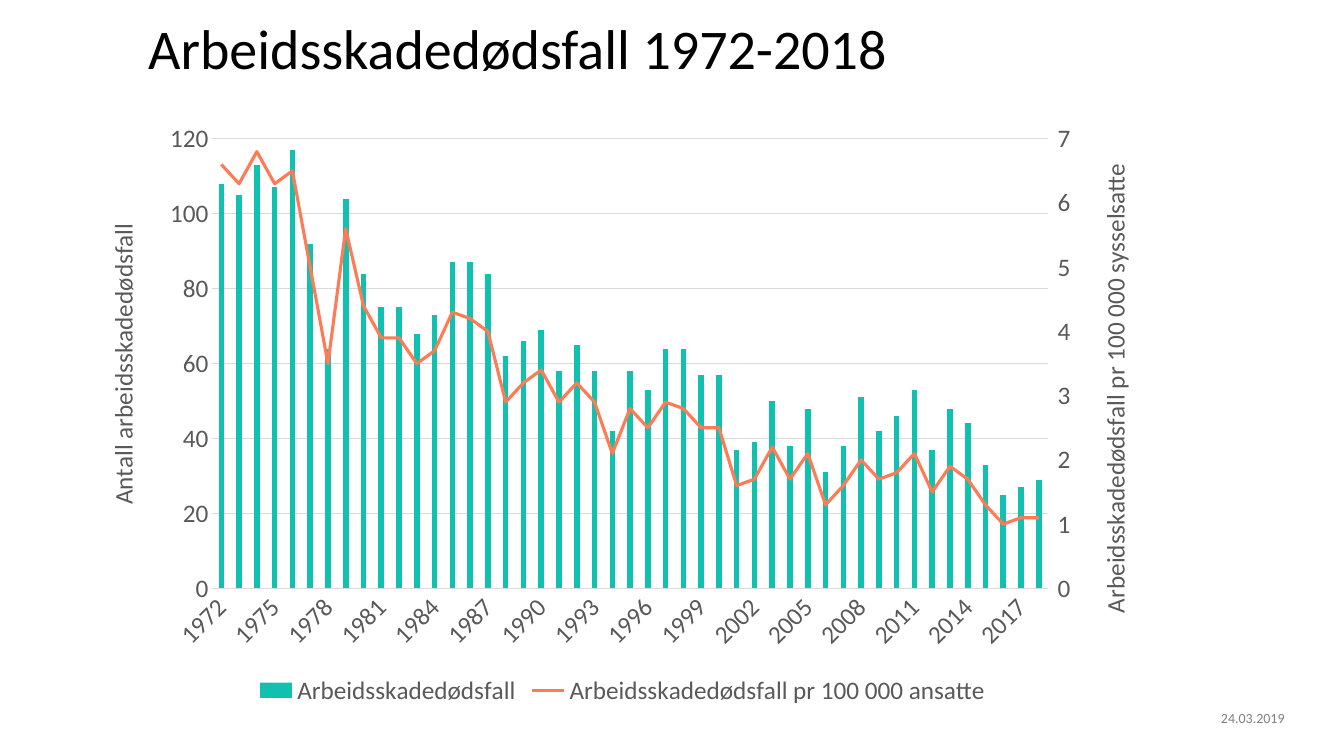
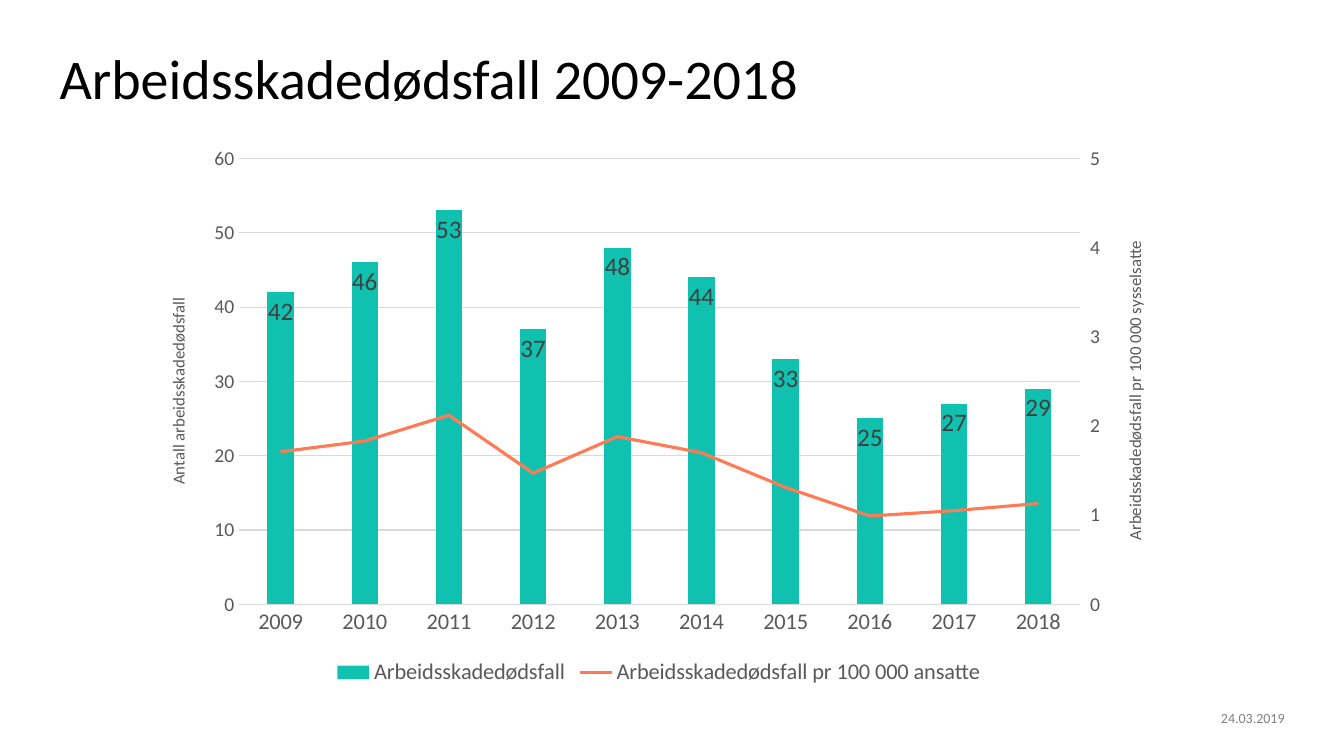
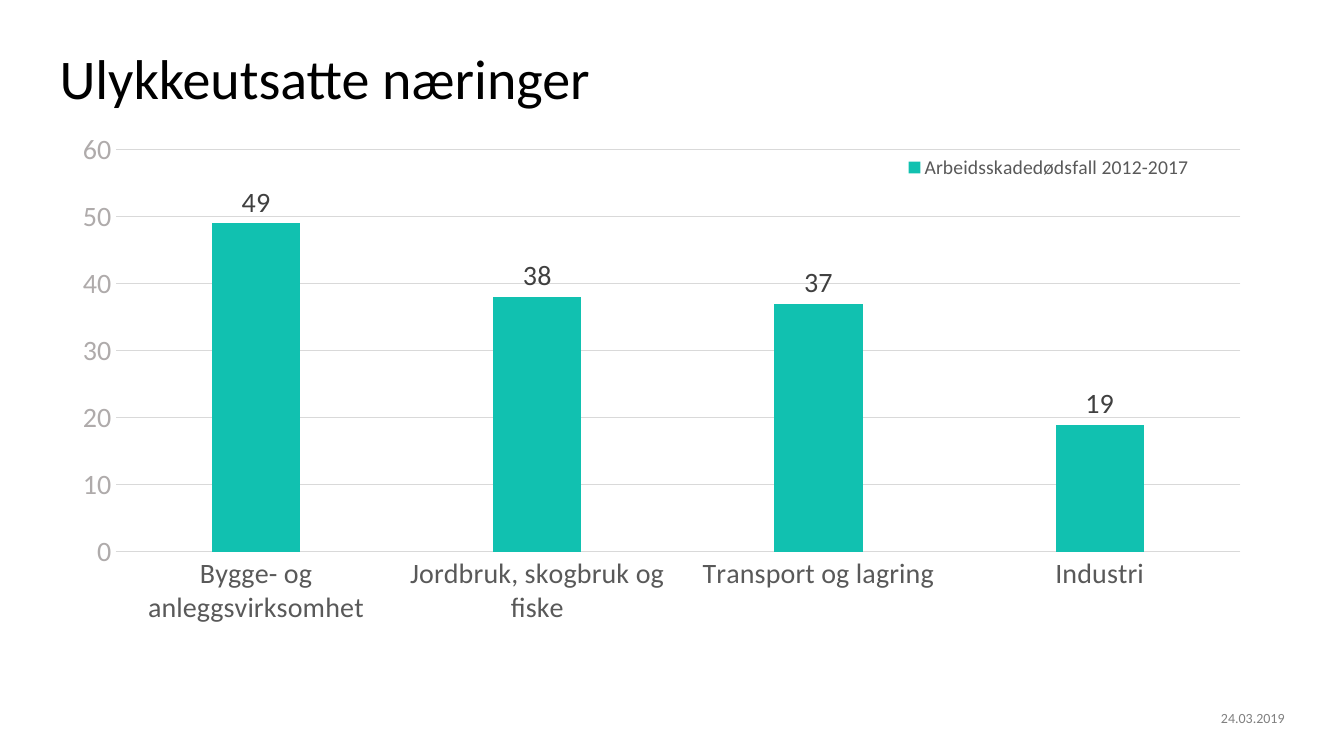
from copy import deepcopy

from pptx import Presentation
from pptx import util as u
from pptx.chart import axis as axes
from pptx.chart import data as chart_data
from pptx.dml import color
from pptx.enum import chart as kinds
from pptx.enum import text
from pptx.oxml import parse_xml

COLORS = {
    "title": "000000",
    "date": "808080",
    "label": "595959",
    "value": "404040",
    "faded": "AFABAB",
    "grid": "D9D9D9",
    "deaths": "11C1B0",
    "rate": "FF7B56",
}
FONT = "Calibri"
CHART_NS = "http://schemas.openxmlformats.org/drawingml/2006/chart"
TITLE_AREA = (4.43, 6.8, 91.15, 8.13)
DATE_AREA = (83.8, 93.87, 11.78, 2.27)

DEATHS_NAME = "Arbeidsskadedødsfall"
RATE_NAME = "Arbeidsskadedødsfall pr 100 000 ansatte"
DEATHS_AXIS = "Antall arbeidsskadedødsfall"
RATE_AXIS = "Arbeidsskadedødsfall pr 100 000 sysselsatte"
YEARS = [str(year) for year in range(1972, 2019)]
DEATHS = [
    108, 105, 113, 107, 117, 92, 64, 104, 84, 75, 75, 68, 73, 87, 87, 84,
    62, 66, 69, 58, 65, 58, 42, 58, 53, 64, 64, 57, 57, 37, 39, 50,
    38, 48, 31, 38, 51, 42, 46, 53, 37, 48, 44, 33, 25, 27, 29,
]
RATES = [
    6.6, 6.3, 6.8, 6.3, 6.5, 5, 3.5, 5.6, 4.4, 3.9, 3.9, 3.5, 3.7, 4.3, 4.2, 4,
    2.9, 3.2, 3.4, 2.9, 3.2, 2.9, 2.1, 2.8, 2.5, 2.9, 2.8, 2.5, 2.5, 1.6, 1.7, 2.2,
    1.7, 2.1, 1.3, 1.6, 2, 1.7, 1.8, 2.1, 1.5, 1.9, 1.7, 1.3, 1, 1.1, 1.1,
]
RECENT_RATES = [1.71, 1.83, 2.12, 1.47, 1.88, 1.7, 1.31, 0.99, 1.05, 1.13]
INDUSTRIES = {
    "Bygge- og anleggsvirksomhet": 49,
    "Jordbruk, skogbruk og fiske": 38,
    "Transport og lagring": 37,
    "Industri": 19,
}


def assign(target, values):
    for name, value in values.items():
        setattr(target, name, value)


def place(host, index, percents):
    for old in host.xpath("c:layout"):
        host.remove(old)
    target = '<c:layoutTarget val="inner"/>' if index == 0 else ""
    sizes = "".join(f'<c:{name} val="{percent / 100:.4f}"/>'
                    for name, percent in zip("xywh", percents))
    host.insert(index, parse_xml(
        f'<c:layout xmlns:c="{CHART_NS}"><c:manualLayout>{target}'
        f'<c:xMode val="edge"/><c:yMode val="edge"/>{sizes}'
        "</c:manualLayout></c:layout>"))


class Deck:
    def __init__(self):
        self.show = Presentation()
        assign(self.show, {"slide_width": u.Inches(13.33), "slide_height": u.Inches(7.5)})
        self.slide = None

    def area(self, percents):
        sides = (self.show.slide_width, self.show.slide_height) * 2
        return [round(side * percent / 100) for side, percent in zip(sides, percents)]

    def style(self, font, size, tone):
        assign(font, {"name": FONT, "size": u.Pt(size), "bold": False})
        font.color.rgb = color.RGBColor.from_string(COLORS[tone])

    def line(self, line, tone, width):
        line.color.rgb = color.RGBColor.from_string(COLORS[tone])
        line.width = u.Pt(width)

    def words(self, content, area, size, tone, **format_values):
        frame = self.slide.shapes.add_textbox(*self.area(area)).text_frame
        margins = dict.fromkeys(
            ("margin_left", "margin_top", "margin_right", "margin_bottom"), 0)
        assign(frame, {"word_wrap": True, **margins})
        paragraph = frame.paragraphs[0]
        assign(paragraph, format_values)
        run = paragraph.add_run()
        run.text = content
        self.style(run.font, size, tone)

    def page(self, title, area=TITLE_AREA):
        self.slide = self.show.slides.add_slide(self.show.slide_layouts[6])
        self.words(title, area, 40, "title", line_spacing=0.9)
        self.words("24.03.2019", DATE_AREA, 10, "date", alignment=text.PP_ALIGN.RIGHT)

    def columns(self, area, plot_area, categories, series, top, step, sizes,
                labels=None, tone="label"):
        data = chart_data.CategoryChartData()
        data.categories = categories
        for name, values in series.items():
            data.add_series(name, values)
        chart = self.slide.shapes.add_chart(
            kinds.XL_CHART_TYPE.COLUMN_CLUSTERED, *self.area(area), data).chart
        assign(chart, {"has_title": False, "has_legend": True})
        self.style(chart.font, sizes["category"], "title")
        assign(chart.legend, {
            "position": kinds.XL_LEGEND_POSITION.BOTTOM, "include_in_layout": False})
        self.style(chart.legend.font, sizes["legend"], "label")
        columns = chart.plots[0]
        assign(columns, {"gap_width": 219, "vary_by_categories": False,
                         "overlap": -27 if len(series) > 1 else 0})
        deaths = columns.series[0]
        deaths.format.fill.solid()
        deaths.format.fill.fore_color.rgb = color.RGBColor.from_string(COLORS["deaths"])
        if labels:
            assign(deaths.data_labels, {"show_value": True, "position": labels})
            self.style(deaths.data_labels.font, sizes["label"], "value")
        across, up = chart.category_axis, chart.value_axis
        for scale in (across, up):
            assign(scale, {"major_tick_mark": kinds.XL_TICK_MARK.NONE,
                           "minor_tick_mark": kinds.XL_TICK_MARK.NONE})
        self.line(across.format.line, "grid", 0.75)
        self.style(across.tick_labels.font, sizes["category"], "label")
        assign(up, {"minimum_scale": 0, "maximum_scale": top, "major_unit": step,
                    "has_major_gridlines": True})
        up.format.line.fill.background()
        self.line(up.major_gridlines.format.line, "grid", 0.75)
        self.style(up.tick_labels.font, sizes["value"], tone)
        place(chart.element.xpath(".//c:plotArea")[0], 0, plot_area)
        return chart

    def axis_title(self, scale, content, size, corner):
        frame = scale.axis_title.text_frame
        frame.text = content
        self.style(frame.paragraphs[0].runs[0].font, size, "label")
        host = scale.axis_title.element
        host.xpath(".//a:bodyPr")[0].set("rot", "-5400000")
        place(host, 1, corner)

    def rate_line(self, chart, top, title_size, left, right):
        self.axis_title(chart.value_axis, DEATHS_AXIS, title_size, left)
        plots = chart.element.xpath(".//c:plotArea")[0]
        bars = plots.xpath("c:barChart")[0]
        rate = bars.xpath("c:ser")[1]
        for flag in rate.xpath("c:invertIfNegative"):
            rate.remove(flag)
        ids = {old.get("val"): str(9000 + n)
               for n, old in enumerate(bars.xpath("c:axId"))}
        links = "".join(f'<c:axId val="{new}"/>' for new in ids.values())
        lines = parse_xml(
            f'<c:lineChart xmlns:c="{CHART_NS}"><c:grouping val="standard"/>'
            f'<c:varyColors val="0"/><c:marker val="1"/>{links}</c:lineChart>')
        lines.insert(2, rate)
        bars.addnext(lines)
        last = plots.xpath("c:valAx")[0]
        copies = [deepcopy(plots.xpath(f"c:{tag}")[0]) for tag in ("valAx", "catAx")]
        for twin in copies:
            for link in twin.xpath("c:axId | c:crossAx"):
                link.set("val", ids[link.get("val")])
            for crossing in twin.xpath("c:crosses"):
                crossing.set("val", "max")
            last.addnext(twin)
            last = twin
        rates, years = axes.ValueAxis(copies[0]), axes.CategoryAxis(copies[1])
        copies[0].xpath("c:axPos")[0].set("val", "r")
        years.visible = False
        assign(rates, {"maximum_scale": top, "major_unit": 1, "has_major_gridlines": False,
                       "major_tick_mark": kinds.XL_TICK_MARK.OUTSIDE,
                       "tick_label_position": kinds.XL_TICK_LABEL_POSITION.HIGH})
        assign(rates.tick_labels, {"number_format": "0", "number_format_is_linked": False})
        series = chart.plots[1].series[0]
        series.smooth = False
        series.marker.style = kinds.XL_MARKER_STYLE.NONE
        self.line(series.format.line, "rate", 2.25)
        self.axis_title(rates, RATE_AXIS, title_size, right)


def main():
    deck = Deck()

    deck.page("Arbeidsskadedødsfall 1972-2018", (11.03, 2.8, 57.54, 8.13))
    history = deck.columns(
        (6.38, 14.8, 79.89, 79.2), (11.8, 4.5, 77.8, 75.1),
        YEARS, {DEATHS_NAME: DEATHS, RATE_NAME: RATES}, 120, 20,
        {"category": 18, "value": 18, "legend": 18})
    history.element.xpath(".//c:catAx/c:txPr/a:bodyPr")[0].set("rot", "-2700000")
    deck.rate_line(history, 7, 18, (1.4, 17.9), (93.8, 7.9))

    deck.page("Arbeidsskadedødsfall 2009-2018")
    decade = deck.columns(
        (10.88, 17.87, 76.29, 73.47), (9, 4.2, 82.1, 80.3),
        YEARS[-10:], {DEATHS_NAME: DEATHS[-10:], RATE_NAME: RECENT_RATES}, 60, 10,
        {"category": 16, "value": 14, "legend": 16, "label": 18},
        kinds.XL_LABEL_POSITION.INSIDE_END)
    deck.rate_line(decade, 5, 12, (1.7, 28.7), (95, 18.5))

    deck.page("Ulykkeutsatte næringer")
    industries = deck.columns(
        (4.43, 16, 89.65, 73.2), (4.65, 5.2, 93.35, 72.7),
        list(INDUSTRIES), {"Arbeidsskadedødsfall 2012-2017": list(INDUSTRIES.values())},
        60, 10, {"category": 20, "value": 20, "legend": 14, "label": 20},
        kinds.XL_LABEL_POSITION.OUTSIDE_END, "faded")
    place(industries.element.xpath(".//c:legend")[0], 1, (69.6, 5.4, 25, 6))

    deck.show.save("out.pptx")


if __name__ == "__main__":
    main()
